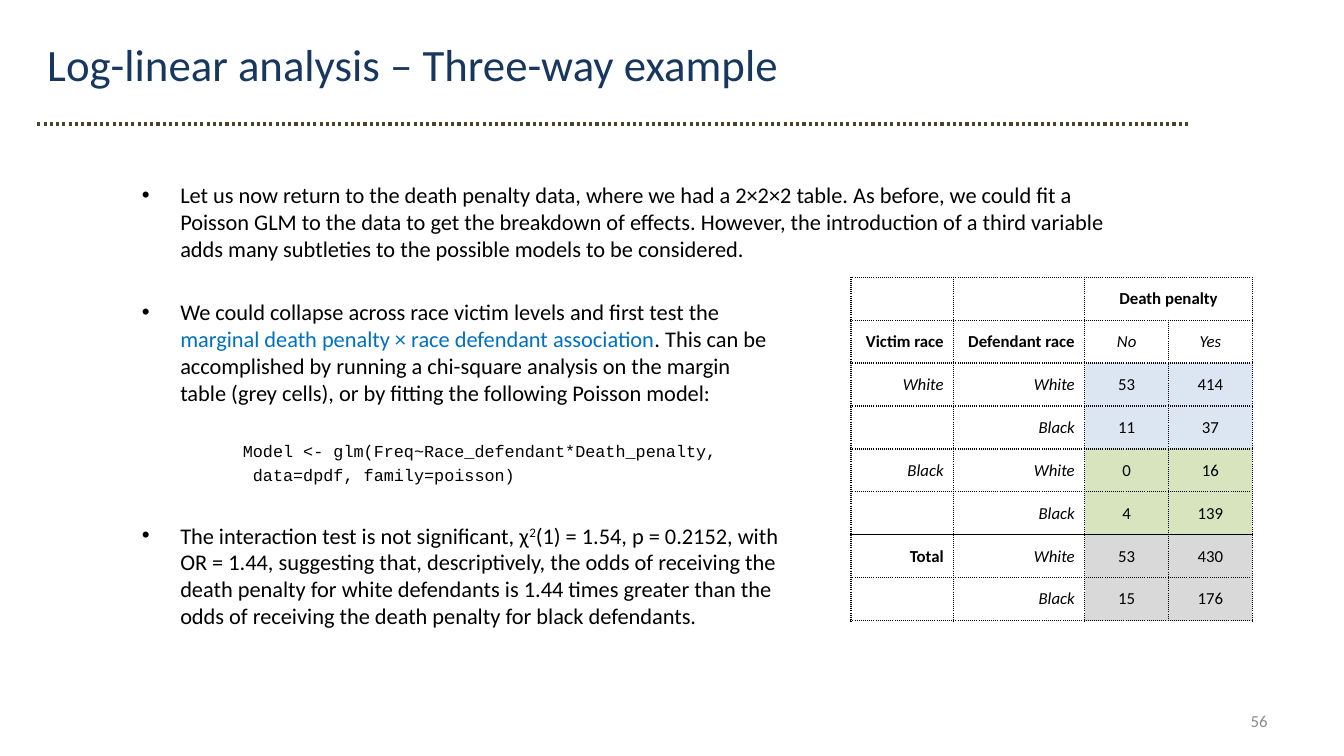
import pptx
import pptx.util
import pptx.dml.color
import pptx.enum.dml
import pptx.enum.shapes
import pptx.enum.text
import pptx.oxml
import pptx.oxml.ns
import lxml.etree

Inches = pptx.util.Inches
Pt = pptx.util.Pt
RGB = pptx.dml.color.RGBColor
ALIGN = pptx.enum.text.PP_ALIGN
MIDDLE = pptx.enum.text.MSO_ANCHOR.MIDDLE
qn = pptx.oxml.ns.qn

BLACK = RGB(0x00, 0x00, 0x00)
NAVY = RGB(0x17, 0x37, 0x5E)
BLUE = RGB(0x00, 0x70, 0xC0)
GREY = RGB(0x8C, 0x8C, 0x8C)
BROWN = RGB(0x4A, 0x45, 0x2A)
PALE = RGB(0xDC, 0xE6, 0xF2)
GREEN = RGB(0xD7, 0xE4, 0xBD)
SILVER = RGB(0xD9, 0xD9, 0xD9)

PLAIN = {"name": "Calibri", "size": Pt(16), "color": BLACK}
CODE = {**PLAIN, "name": "Courier New", "size": Pt(12)}
SMALL = {**PLAIN, "size": Pt(12)}

POINTS = [
    (0, True, PLAIN, [("Let us now return to the death penalty data, where we had a 2×2×2 table. "
                       "As before, we could fit a Poisson GLM to the data to get the breakdown of "
                       "effects. However, the introduction of a third variable adds many subtleties "
                       "to the possible models to be considered.", {})]),
    (26, True, PLAIN, [("We could collapse across race victim levels and first test the \n", {}),
                       ("marginal death penalty × race defendant association", {"color": BLUE}),
                       (". This can be\naccomplished by running a chi-square analysis on the margin\n"
                        "table (grey cells), or by fitting the following Poisson model:", {})]),
    (25, False, CODE, [("Model <- glm(Freq~Race_defendant*Death_penalty,", {})]),
    (3, False, CODE, [(" data=dpdf, family=poisson)", {})]),
    (26, True, PLAIN, [("The interaction test is not significant, χ", {}),
                       ("2", {"base": 30000}),
                       ("(1) = 1.54, p = 0.2152, with\nOR = 1.44, suggesting that, descriptively, "
                        "the odds of receiving the\ndeath penalty for white defendants is 1.44 times "
                        "greater than the \nodds of receiving the death penalty for black "
                        "defendants.", {})]),
]

ROWS = [
    (["", "", "Death penalty", ""], None),
    (["Victim race", "Defendant race", "No", "Yes"], None),
    (["White", "White", "53", "414"], PALE),
    (["", "Black", "11", "37"], PALE),
    (["Black", "White", "0", "16"], GREEN),
    (["", "Black", "4", "139"], GREEN),
    (["Total", "White", "53", "430"], SILVER),
    (["", "Black", "15", "176"], SILVER),
]
WIDTHS = [1.02, 1.3, 0.83, 0.83]
BOLD = {"Death penalty", "Victim race", "Defendant race", "Total"}
SLANT = {"No", "Yes", "White", "Black"}
TOTAL = 6


def style(run, form):
    for key, value in form.items():
        if key == "color":
            run.font.color.rgb = value
        elif key == "base":
            run.font._element.set("baseline", str(value))
        else:
            setattr(run.font, key, value)


def write(para, text, form):
    for num, line in enumerate(text.split("\n")):
        if num:
            para.add_line_break()
        if line:
            run = para.add_run()
            run.text = line
            style(run, form)


def frame(slide, box):
    text = slide.shapes.add_textbox(*map(Inches, box)).text_frame
    text.word_wrap = True
    return text


def label(slide, box, text, form, align=ALIGN.LEFT, anchor=None):
    area = frame(slide, box)
    area.vertical_anchor = anchor
    para = area.paragraphs[0]
    para.alignment = align
    write(para, text, form)


def rule(slide, box):
    left, top, width = box
    line = slide.shapes.add_connector(
        pptx.enum.shapes.MSO_CONNECTOR.STRAIGHT,
        *map(Inches, (left, top, left + width, top)))
    line.line.color.rgb = BROWN
    line.line.width = Pt(2.25)
    line.line.dash_style = pptx.enum.dml.MSO_LINE.ROUND_DOT
    lxml.etree.SubElement(line._element.spPr, qn("a:effectLst"))


def body(slide, box):
    area = frame(slide, box)
    for num, (gap, dot, base, runs) in enumerate(POINTS):
        para = area.add_paragraph() if num else area.paragraphs[0]
        para.space_before = Pt(gap)
        props = para._p.get_or_add_pPr()
        props.set("marL", str(Inches(0.38 if dot else 1)))
        props.set("indent", str(Inches(-0.38 if dot else 0)))
        if dot:
            font = lxml.etree.SubElement(props, qn("a:buFont"))
            font.set("typeface", "Arial")
            lxml.etree.SubElement(props, qn("a:buChar")).set("char", "•")
        for text, form in runs:
            write(para, text, {**base, **form})


def edges(cell, solid):
    props = cell._tc.get_or_add_tcPr()
    for side in "LRTB":
        line = lxml.etree.SubElement(props, qn("a:ln" + side), w=str(Pt(1)))
        fill = lxml.etree.SubElement(line, qn("a:solidFill"))
        lxml.etree.SubElement(fill, qn("a:srgbClr"), val=str(BLACK))
        dash = "solid" if side == solid else "sysDot"
        lxml.etree.SubElement(line, qn("a:prstDash"), val=dash)


def grid(slide, box):
    table = slide.shapes.add_table(len(ROWS), len(WIDTHS), *map(Inches, box)).table
    table.first_row = table.horz_banding = False
    for col, width in zip(table.columns, WIDTHS):
        col.width = Inches(width)
    table.cell(0, 2).merge(table.cell(0, 3))
    for y, (texts, tint) in enumerate(ROWS):
        table.rows[y].height = Inches(box[3] / len(ROWS))
        for x, text in enumerate(texts):
            cell = table.cell(y, x)
            edges(cell, {TOTAL - 1: "B", TOTAL: "T"}.get(y))
            if tint and x > 1:
                cell.fill.solid()
                cell.fill.fore_color.rgb = tint
            else:
                cell.fill.background()
            cell.vertical_anchor = MIDDLE
            para = cell.text_frame.paragraphs[0]
            para.alignment = ALIGN.CENTER if x > 1 else ALIGN.RIGHT
            write(para, text, {**SMALL, "bold": text in BOLD, "italic": text in SLANT})


def main():
    deck = pptx.Presentation()
    deck.slide_width = Inches(13.33)
    deck.slide_height = Inches(7.5)
    slide = deck.slides.add_slide(deck.slide_layouts[6])
    label(slide, (9.56, 6.95, 3.11, 0.4), "56", {**SMALL, "color": GREY}, ALIGN.RIGHT, MIDDLE)
    label(slide, (0.37, 0.32, 11.65, 0.64), "Log-linear analysis – Three-way example",
          {**PLAIN, "size": Pt(32), "color": NAVY})
    body(slide, (1.31, 1.75, 9.76, 5.39))
    grid(slide, (8.44, 2.75, 3.98, 3.41))
    rule(slide, (0.37, 1.23, 11.41))
    deck.save("out.pptx")


if __name__ == "__main__":
    main()
